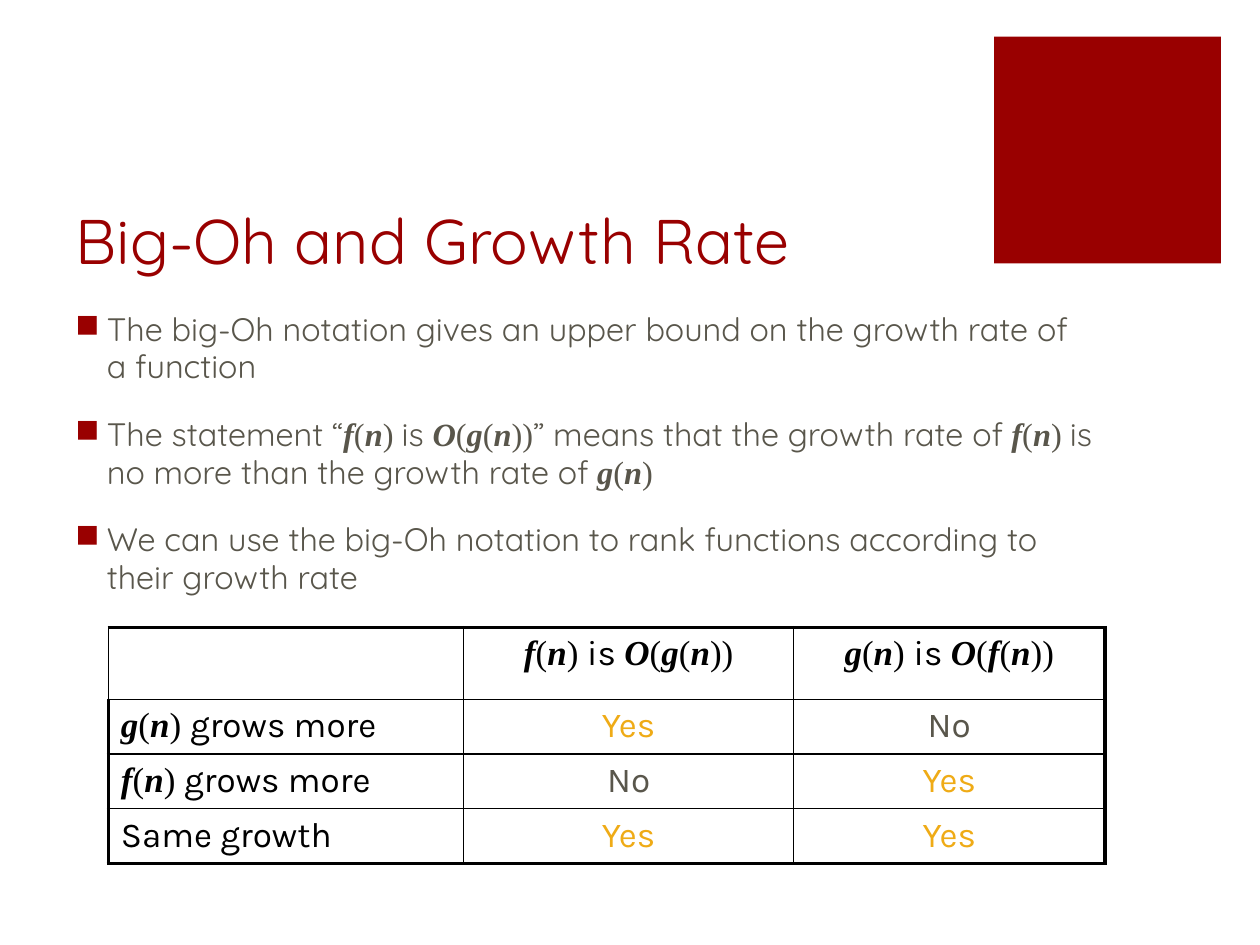
from itertools import groupby

from pptx import Presentation, util as u
from pptx.dml import color
from pptx.enum import shapes, text
from pptx.oxml import parse_xml, ns

RED, GREY, BLACK, GOLD = "990000", "59564B", "000000", "EFAB16"
MATH_FONT = "Times New Roman"
LEFT, CENTER = text.PP_ALIGN.LEFT, text.PP_ALIGN.CENTER


def rgb(value):
    return color.RGBColor.from_string(value)


def box(left, top, width, height):
    return [u.Inches(length) for length in (left, top, width, height)]


def set_values(target, values):
    for name, value in values.items():
        setattr(target, name, value)


def add_run(paragraph, words, value, **font):
    run = paragraph.add_run()
    run.text = words
    set_values(run.font, font)
    run.font.color.rgb = rgb(value)


def write(paragraph, words, font, size, value):
    """Fill a paragraph; parts between $ signs are math with bold italic letters."""
    for index, part in enumerate(words.split("$")):
        if index % 2 == 0:
            if part:
                add_run(paragraph, part, value, name=font, size=u.Pt(size))
            continue
        for is_letter, symbols in groupby(part, str.isalpha):
            add_run(paragraph, "".join(symbols), value, name=MATH_FONT,
                    size=u.Pt(size), bold=is_letter, italic=is_letter)


def add_bullet(paragraph, symbol, value, indent):
    properties = paragraph._p.get_or_add_pPr()
    properties.set("marL", str(u.Inches(indent)))
    properties.set("indent", str(-u.Inches(indent)))
    for xml in (f'<a:buClr {ns.nsdecls("a")}><a:srgbClr val="{value}"/></a:buClr>',
                f'<a:buChar {ns.nsdecls("a")} char="{symbol}"/>'):
        properties.append(parse_xml(xml))


def set_borders(cell, widths):
    """Draw the cell's borders; widths are points for left, right, top, bottom."""
    properties = cell._tc.get_or_add_tcPr()
    for index, (side, width) in enumerate(zip("LRTB", widths)):
        properties.insert(index, parse_xml(
            f'<a:ln{side} {ns.nsdecls("a")} w="{u.Pt(width)}"><a:solidFill>'
            f'<a:srgbClr val="{BLACK}"/></a:solidFill></a:ln{side}>'))


class SlideBuilder:
    heading_font = "Quicksand"
    table_font = "Karla"
    thin, thick = 1, 2.25

    def __init__(self, slide):
        self.slide = slide

    def title(self, words, *place):
        shape = self.slide.shapes.title
        set_values(shape, dict(zip(("left", "top", "width", "height"), box(*place))))
        set_values(shape.text_frame, {
            "vertical_anchor": text.MSO_ANCHOR.BOTTOM,
            "word_wrap": True,
            "auto_size": text.MSO_AUTO_SIZE.NONE,
        })
        paragraph = shape.text_frame.paragraphs[0]
        paragraph.alignment = LEFT
        write(paragraph, words, self.heading_font, 36, RED)

    def rectangle(self, value, *place):
        shape = self.slide.shapes.add_shape(shapes.MSO_SHAPE.RECTANGLE, *box(*place))
        shape.shadow.inherit = False
        shape.fill.solid()
        shape.fill.fore_color.rgb = rgb(value)
        shape.line.fill.background()

    def bullets(self, items, *place):
        frame = self.slide.shapes.add_textbox(*box(*place)).text_frame
        frame.word_wrap = True
        for index, words in enumerate(items):
            paragraph = frame.add_paragraph() if index else frame.paragraphs[0]
            set_values(paragraph, {"space_before": u.Pt(17), "line_spacing": 0.97})
            add_bullet(paragraph, "■", RED, 0.25)
            write(paragraph, words, self.heading_font, 18.5, GREY)

    def table(self, rows, widths, heights, left, top):
        table = self.slide.shapes.add_table(
            len(rows), len(widths),
            *box(left, top, sum(widths), sum(heights))).table
        set_values(table, {"first_row": False, "horz_banding": False})
        for column, width in zip(table.columns, widths):
            column.width = u.Inches(width)
        for row, height in zip(table.rows, heights):
            row.height = u.Inches(height)
        last_row, last_column = len(rows) - 1, len(widths) - 1
        answer_colors = {"Yes": GOLD, "No": GREY}
        for r, row in enumerate(rows):
            for c, words in enumerate(row):
                cell = table.cell(r, c)
                cell.fill.background()
                outer = (c == 0 and r > 0, c == last_column, r == 0, r == last_row)
                set_borders(cell, [self.thick if edge else self.thin for edge in outer])
                paragraph = cell.text_frame.paragraphs[0]
                paragraph.alignment = CENTER if c else LEFT
                write(paragraph, words, self.table_font, 20,
                      answer_colors.get(words, BLACK))


def main():
    presentation = Presentation()
    set_values(presentation, {"slide_width": u.Inches(10),
                              "slide_height": u.Inches(7.5)})
    title_only = presentation.slide_layouts[5]
    builder = SlideBuilder(presentation.slides.add_slide(title_only))
    builder.rectangle(RED, 7.89, 0.29, 1.8, 1.8)
    builder.title("Big-Oh and Growth Rate", 0.5, 1, 7.12, 1.25)
    builder.bullets([
        "The big-Oh notation gives an upper bound on the growth rate of a function",
        "The statement “$f(n) $is $O(g(n))$” means that the growth rate of "
        "$f(n) $is no more than the growth rate of $g(n)$",
        "We can use the big-Oh notation to rank functions according to "
        "their growth rate",
    ], 0.5, 2.42, 8.28, 2.32)
    builder.table([
        ["", "$f(n) $is $O(g(n))$", "$g(n) $is $O(f(n))$"],
        ["$g(n) $grows more", "Yes", "No"],
        ["$f(n) $grows more", "No", "Yes"],
        ["Same growth", "Yes", "Yes"],
    ], [2.82, 2.62, 2.47], [0.57] + [0.42] * 3, 0.86, 4.98)
    presentation.save("out.pptx")


if __name__ == "__main__":
    main()
